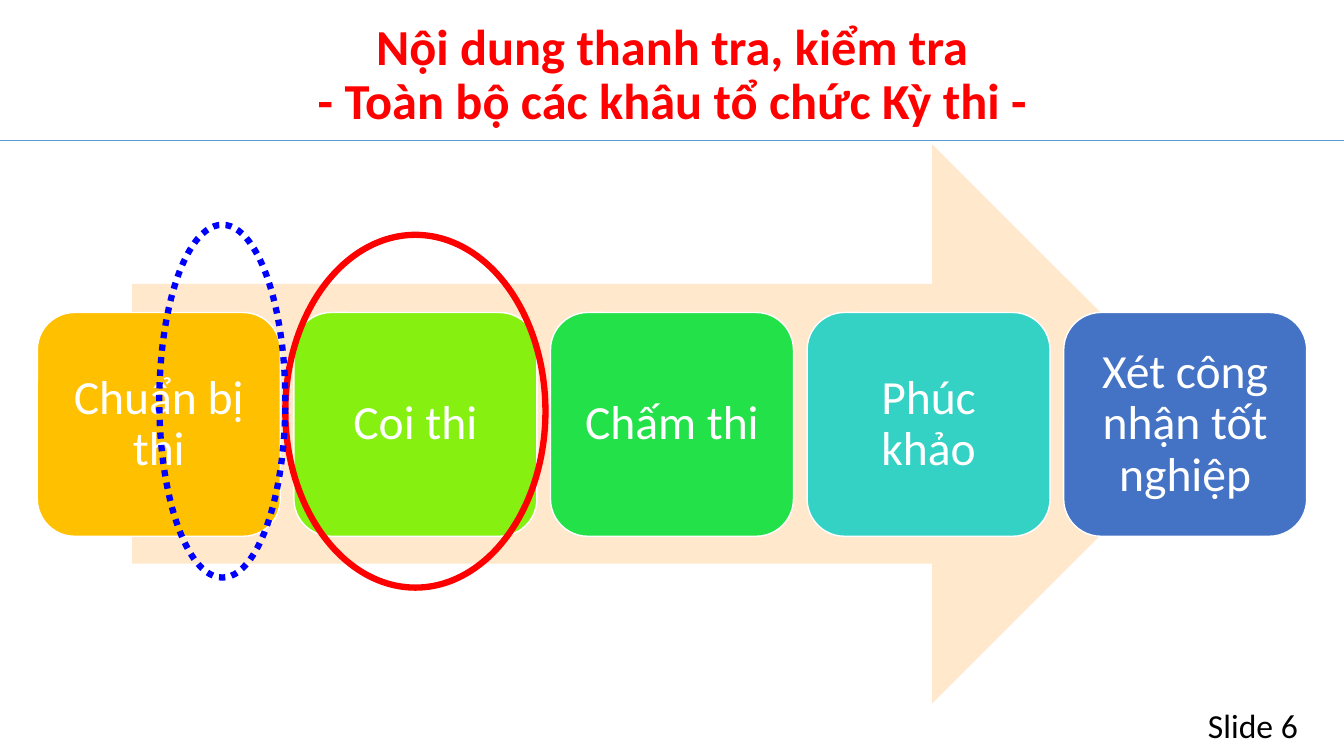
import dataclasses

import pptx
import pptx.dml.color
import pptx.enum.dml
import pptx.enum.shapes
import pptx.enum.text
import pptx.oxml
import pptx.oxml.ns
import pptx.util

Inches = pptx.util.Inches
Pt = pptx.util.Pt
RGB = pptx.dml.color.RGBColor.from_string
KIND = pptx.enum.shapes.MSO_SHAPE
ALIGN = pptx.enum.text.PP_ALIGN
ANCHOR = pptx.enum.text.MSO_ANCHOR
DASH = pptx.enum.dml.MSO_LINE


@dataclasses.dataclass
class Theme:
    font: str = "Calibri"
    title: int = 36
    step: int = 34
    number: int = 24
    red: str = "FF0000"
    blue: str = "0000FF"
    white: str = "FFFFFF"
    black: str = "000000"
    rule: str = "5B9BD5"
    arrow: str = "FFE8CC"
    steps: tuple = ("FFC000", "86F011", "23E148", "33D2C5", "4472C4")


theme = Theme()
deck = pptx.Presentation()
deck.slide_width = Inches(13.33)
deck.slide_height = Inches(7.5)
slide = deck.slides.add_slide(deck.slide_layouts[6])
shapes = slide.shapes


def write(shape, text, size, color, bold=False, align=ALIGN.CENTER,
          anchor=ANCHOR.MIDDLE, pad=(0.1, 0.05), gap=0.9):
    frame = shape.text_frame
    frame.word_wrap = True
    frame.vertical_anchor = anchor
    frame.margin_left = frame.margin_right = Inches(pad[0])
    frame.margin_top = frame.margin_bottom = Inches(pad[1])
    para = frame.paragraphs[0]
    para.text = text
    para.alignment = align
    para.line_spacing = gap
    for run in para.runs:
        run.font.name = theme.font
        run.font.size = Pt(size)
        run.font.bold = bold
        run.font.color.rgb = RGB(color)


def draw(kind, box, fill=None, line=None, width=1):
    """Add a preset shape without shadow; no fill or line unless given."""
    shape = shapes.add_shape(kind, *map(Inches, box))
    shape.shadow.inherit = False
    if fill:
        shape.fill.solid()
        shape.fill.fore_color.rgb = RGB(fill)
    else:
        shape.fill.background()
    if line:
        shape.line.color.rgb = RGB(line)
        shape.line.width = Pt(width)
    else:
        shape.line.fill.background()
    return shape


# Header and slide number
rule = shapes.add_connector(pptx.enum.shapes.MSO_CONNECTOR.STRAIGHT,
                            0, Inches(1.39), Inches(13.33), Inches(1.39))
rule.line.color.rgb = RGB(theme.rule)
rule.line.width = Pt(0.5)
rule._element.spPr.append(pptx.oxml.parse_xml(
    f"<a:effectLst {pptx.oxml.ns.nsdecls('a')}/>"))

number = shapes.add_textbox(*map(Inches, (10.29, 6.94, 2.68, 0.5)))
write(number, "Slide 6", theme.number, theme.black,
      align=ALIGN.RIGHT, anchor=ANCHOR.TOP, gap=1.0)

title = shapes.add_textbox(*map(Inches, (0.37, 0.19, 12.6, 1.13)))
write(title, "Nội dung thanh tra, kiểm tra\v- Toàn bộ các khâu tổ chức Kỳ thi -",
      theme.title, theme.red, bold=True)

# Exam steps on the arrow
draw(KIND.RIGHT_ARROW, (1.31, 1.43, 10.71, 5.55), fill=theme.arrow)
names = ("Chuẩn bị thi", "Coi thi", "Chấm thi", "Phúc khảo",
         "Xét công nhận tốt nghiệp")
for i, (name, color) in enumerate(zip(names, theme.steps)):
    step = draw(KIND.ROUNDED_RECTANGLE, (0.37 + i * 2.545, 3.1, 2.41, 2.22),
                fill=color, line=theme.white)
    write(step, name, theme.step, theme.white, pad=(0.14, 0.14))

# Rings around the inspected steps
draw(KIND.OVAL, (2.83, 2.33, 2.58, 3.5), line=theme.red, width=4.5)
ring = draw(KIND.OVAL, (1.58, 2.23, 1.25, 3.5), line=theme.blue, width=4.5)
ring.line.dash_style = DASH.ROUND_DOT

deck.save("out.pptx")
